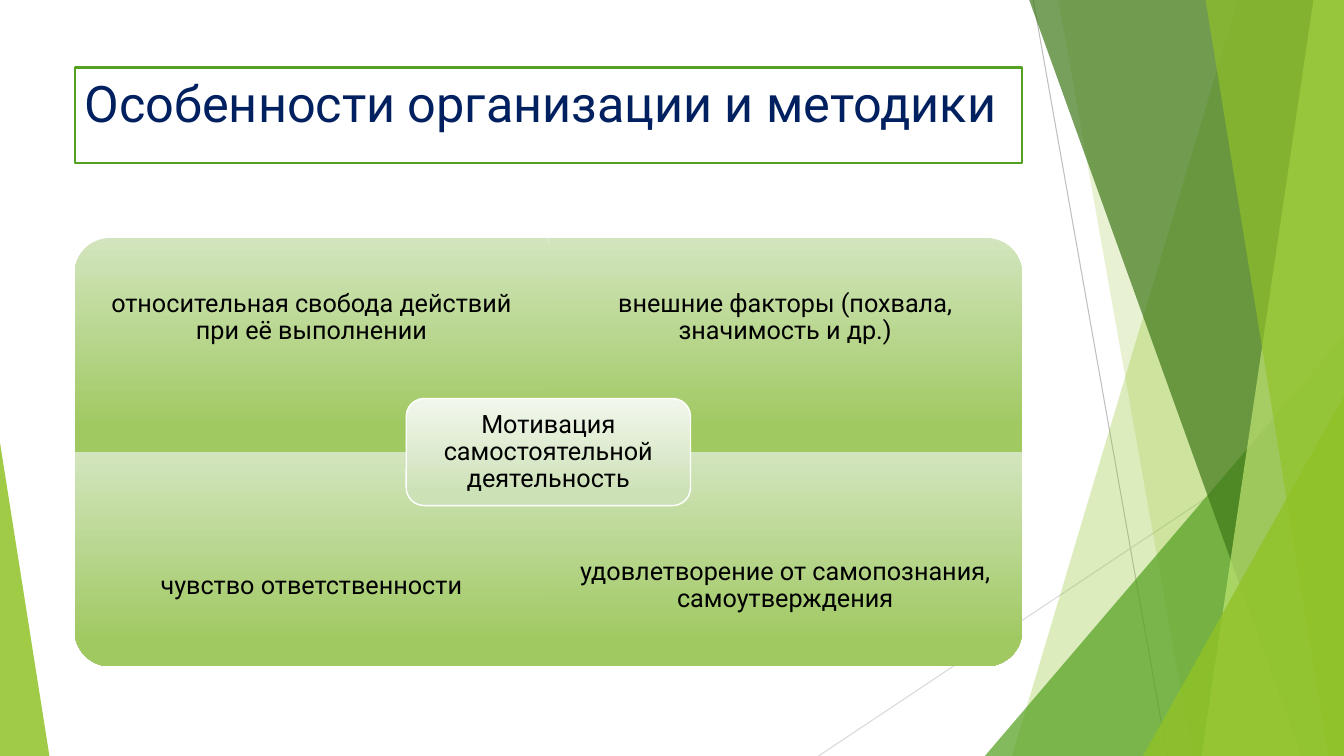
from dataclasses import dataclass

from lxml.etree import SubElement
from pptx import Presentation
from pptx.dml.color import RGBColor
from pptx.enum.shapes import MSO_CONNECTOR as Link, MSO_SHAPE as Shape
from pptx.enum.text import MSO_ANCHOR as Anchor, MSO_AUTO_SIZE as AutoSize, PP_ALIGN as Align
from pptx.oxml.ns import qn
from pptx.util import Emu, Inches, Pt

FONT = "Roboto"
WIDTH, HEIGHT = Inches(13.333), Inches(7.5)
LEFT, TOP, COL, ROW = 5.55, 31.47, 35.25, 28.33


@dataclass
class Ray:
    x1: float
    y1: float
    x2: float
    y2: float
    color: str


@dataclass
class Band:
    top_x: float
    bottom_x: float
    color: str
    alpha: int


@dataclass
class Wedge:
    left: float
    top: float
    width: float
    apex: int
    color: str
    alpha: int


@dataclass
class Tile:
    col: int
    row: int
    turn: int
    text: str


DECOR = [
    Ray(76.88, 0, 86.85, 100, "BFBFBF"),
    Ray(100, 53.73, 60.9, 100, "D9D9D9"),
    Band(92.1, 75.3, "90C226", 30),
    Band(78.75, 88.73, "90C226", 20),
    Wedge(73.28, 44.4, 26.72, 1, "54A021", 72),
    Band(76.58, 96.83, "3F7819", 70),
    Band(97.73, 89.4, "C0E474", 70),
    Band(89.7, 98.85, "90C226", 65),
    Wedge(85.05, 52.4, 14.95, 1, "90C226", 80),
    Wedge(0, 58.53, 3.68, 0, "90C226", 85),
]
TILES = [
    Tile(0, 0, 270, "относительная свобода действий при её выполнении"),
    Tile(1, 0, 0, "внешние факторы (похвала, значимость и др.)"),
    Tile(0, 1, 180, "чувство ответственности"),
    Tile(1, 1, 90, "удовлетворение от самопознания, самоутверждения"),
]


def rgb(color: str) -> RGBColor:
    return RGBColor.from_string(color)


def px(share: float) -> Emu:
    return Emu(round(WIDTH * share / 100))


def py(share: float) -> Emu:
    return Emu(round(HEIGHT * share / 100))


def box(x: float, y: float, w: float, h: float) -> tuple[Emu, Emu, Emu, Emu]:
    return px(x), py(y), px(w), py(h)


def paint(sp, color: str, alpha: int) -> None:
    sp.shadow.inherit = False
    sp.line.fill.background()
    sp.fill.solid()
    sp.fill.fore_color.rgb = rgb(color)
    clr = sp._element.spPr.find(qn("a:solidFill")).find(qn("a:srgbClr"))
    SubElement(clr, qn("a:alpha")).set("val", str(alpha * 1000))


def shade(sp, light: str, dark: str) -> None:
    sp.shadow.inherit = False
    sp.fill.gradient()
    sp.fill.gradient_angle = 270
    for stop, color, pos in zip(sp.fill.gradient_stops, (light, dark), (0, 0.88)):
        stop.color.rgb = rgb(color)
        stop.position = pos
    sp._element.spPr.find(qn("a:gradFill")).set("rotWithShape", "0")


def write(sp, text: str, inset: int) -> None:
    tf = sp.text_frame
    tf.word_wrap = True
    tf.vertical_anchor = Anchor.MIDDLE
    tf.margin_left = tf.margin_right = tf.margin_top = tf.margin_bottom = Pt(inset)
    p = tf.paragraphs[0]
    p.text = text
    p.alignment = Align.CENTER
    p.line_spacing = 0.9
    p.font.name, p.font.size = FONT, Pt(18)
    p.font.color.rgb = rgb("000000")


def draw_ray(s, ray: Ray) -> None:
    line = s.shapes.add_connector(Link.STRAIGHT, px(ray.x1), py(ray.y1), px(ray.x2), py(ray.y2))
    line.line.color.rgb = rgb(ray.color)
    line.line.width = Pt(0.75)
    SubElement(line._element.spPr, qn("a:effectLst"))


def draw_band(s, band: Band) -> None:
    outline = s.shapes.build_freeform(px(band.top_x), 0)
    outline.add_line_segments([(WIDTH, 0), (WIDTH, HEIGHT), (px(band.bottom_x), HEIGHT)])
    paint(outline.convert_to_shape(), band.color, band.alpha)


def draw_wedge(s, wedge: Wedge) -> None:
    sp = s.shapes.add_shape(
        Shape.ISOSCELES_TRIANGLE, *box(wedge.left, wedge.top, wedge.width, 100 - wedge.top))
    sp.adjustments[0] = wedge.apex
    paint(sp, wedge.color, wedge.alpha)


def draw_tile(s, tile: Tile) -> None:
    x, y = LEFT + tile.col * COL, TOP + tile.row * ROW
    left, top, w, h = box(x, y, COL, ROW)
    if tile.turn % 180:
        left, top, w, h = left + (w - h) // 2, top + (h - w) // 2, h, w
    sp = s.shapes.add_shape(Shape.ROUND_1_RECTANGLE, left, top, w, h)
    sp.rotation = tile.turn
    sp.line.fill.background()
    shade(sp, "D3E5BE", "A0C962")
    label = s.shapes.add_textbox(*box(x, y + tile.row * ROW / 4, COL, ROW * 0.75))
    write(label, tile.text, 10)


def draw_center(s, text: str) -> None:
    w, h = COL * 0.6, ROW / 2
    sp = s.shapes.add_shape(
        Shape.ROUNDED_RECTANGLE, *box(LEFT + COL - w / 2, TOP + ROW - h / 2, w, h))
    shade(sp, "F2F7ED", "CDE1B7")
    sp.line.color.rgb = rgb("FFFFFF")
    sp.line.width = Pt(1)
    write(sp, text, 5)


def draw_title(s, text: str) -> None:
    sp = s.shapes.title
    sp.left, sp.top, sp.width, sp.height = box(LEFT, 8.93, 2 * COL, 12.67)
    sp.fill.solid()
    sp.fill.fore_color.rgb = rgb("FFFFFF")
    sp.line.color.rgb = rgb("54A021")
    sp.line.width = Pt(1.5)
    tf = sp.text_frame
    tf.word_wrap = True
    tf.auto_size = AutoSize.NONE
    tf.vertical_anchor = Anchor.TOP
    p = tf.paragraphs[0]
    p.text = text
    p.alignment = Align.LEFT
    p.font.name, p.font.size = FONT, Pt(36)
    p.font.color.rgb = rgb("002060")


def main() -> None:
    prs = Presentation()
    prs.slide_width, prs.slide_height = WIDTH, HEIGHT
    s = prs.slides.add_slide(prs.slide_layouts[5])
    draw_title(s, "Особенности организации и методики")
    painters = {Ray: draw_ray, Band: draw_band, Wedge: draw_wedge}
    for item in DECOR:
        painters[type(item)](s, item)
    for tile in TILES:
        draw_tile(s, tile)
    draw_center(s, "Мотивация самостоятельной деятельность")
    prs.save("out.pptx")


if __name__ == "__main__":
    main()
